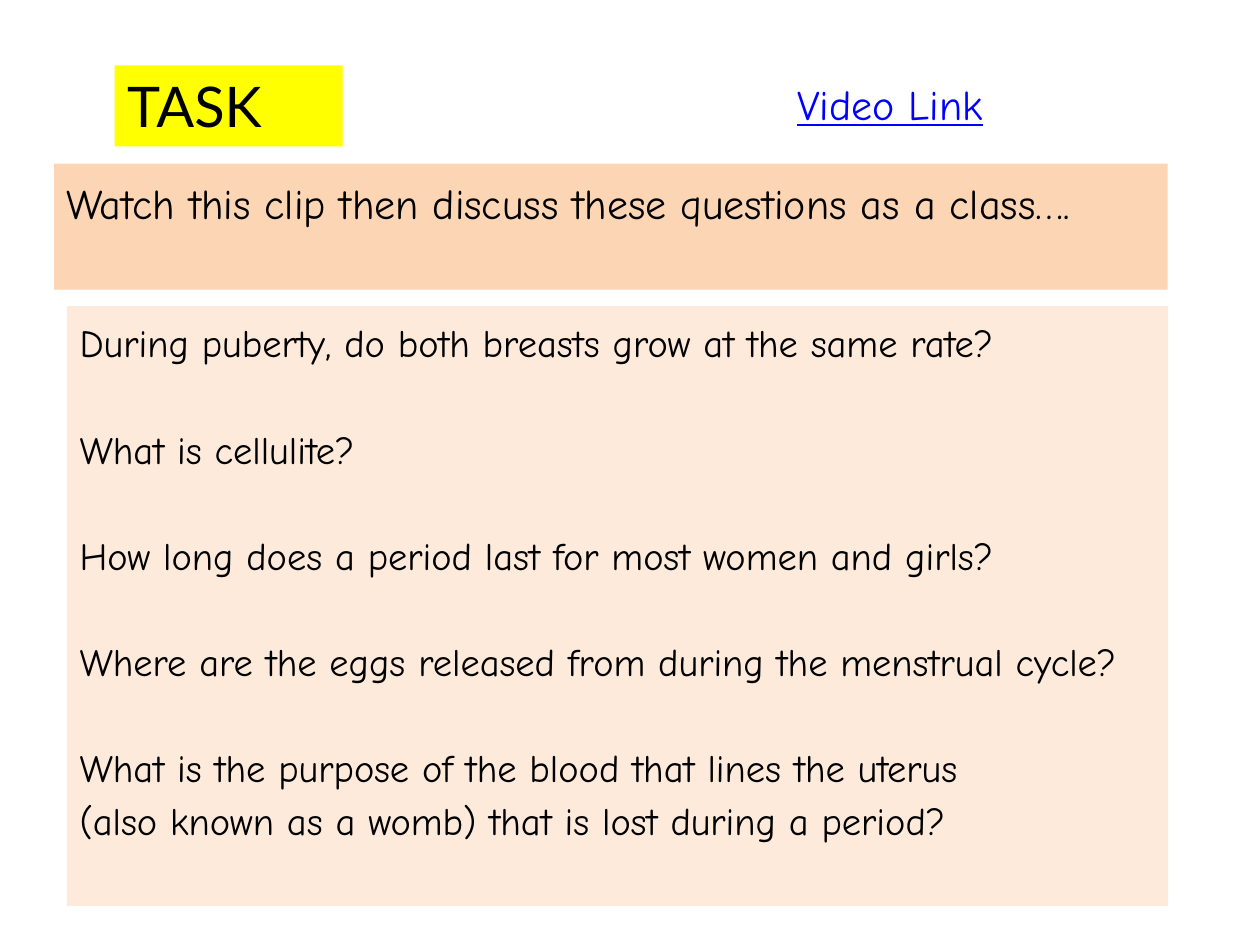
from pptx import Presentation
from pptx.dml.color import RGBColor as Rgb
from pptx.enum.text import MSO_ANCHOR as Anchor, MSO_AUTO_SIZE as Fit, PP_ALIGN as Align
from pptx.oxml.ns import qn
from pptx.util import Cm, Pt

HUES = {
    "ink": "000000",
    "link": "0000FF",
    "task": "FFFF00",
    "intro": "FCD5B5",
    "list": "FDEADA",
}
HAND = "Comic Neue"
ASKS = [
    "During puberty, do both breasts grow at the same rate?",
    "What is cellulite?",
    "How long does a period last for most women and girls?",
    "Where are the eggs released from during the menstrual cycle?",
    "What is the purpose of the blood that lines the uterus\v"
    "(also known as a womb) that is lost during a period?",
]


def hue(name):
    return Rgb.from_string(HUES[name])


def place(shape, left, top, width, height, fill=None):
    """Set the box of a shape and, if wanted, its fill."""
    shape.left, shape.top = Cm(left), Cm(top)
    shape.width, shape.height = Cm(width), Cm(height)
    if fill:
        shape.fill.solid()
        shape.fill.fore_color.rgb = hue(fill)


def write(shape, lines, size, face=HAND, ink="ink", line=1.15, gap=0, under=False):
    """Write one paragraph per line, with a gap in points between them."""
    frame = shape.text_frame
    frame.text = lines[0]
    for text in lines[1:]:
        frame.add_paragraph().text = text
    frame.word_wrap = True
    frame.auto_size = Fit.NONE
    frame.vertical_anchor = Anchor.TOP
    for i, para in enumerate(frame.paragraphs):
        para.alignment = Align.LEFT
        para.line_spacing = line
        para.space_before = Pt(gap if i else 0)
        for run in para.runs:
            font = run.font
            font.name, font.size = face, Pt(size)
            font.color.rgb = hue(ink)
            if under:
                font.underline = True


def unmark(shape):
    """Take bullets and hanging indents off a list."""
    for para in shape.text_frame.paragraphs:
        props = para._p.get_or_add_pPr()
        props.set("marL", "0")
        props.set("indent", "0")
        props.append(props.makeelement(qn("a:buNone"), {}))


def add_text(slide, box, text, size, fill=None, **style):
    shape = slide.shapes.add_textbox(0, 0, 0, 0)
    place(shape, *box, fill)
    write(shape, [text], size, **style)


def main():
    deck = Presentation()
    deck.slide_width, deck.slide_height = Cm(25.4), Cm(19.05)
    slide = deck.slides.add_slide(deck.slide_layouts[1])
    title, body = slide.placeholders

    # Heading and link
    place(title, 2.31, 1.32, 4.6, 1.63, "task")
    write(title, ["TASK"], 32, face="Lato", line=1.0)
    add_text(slide, (15.82, 1.3, 5.36, 1.35), "Video Link", 24, ink="link", under=True)

    # Instruction
    add_text(slide, (1.09, 3.3, 22.45, 2.54),
             "Watch this clip then discuss these questions as a class….", 24, "intro")

    # Questions, one blank line's height apart
    place(body, 1.35, 6.17, 22.2, 12.09, "list")
    write(body, ASKS, 22, gap=30.4)
    unmark(body)

    deck.save("out.pptx")


if __name__ == "__main__":
    main()
